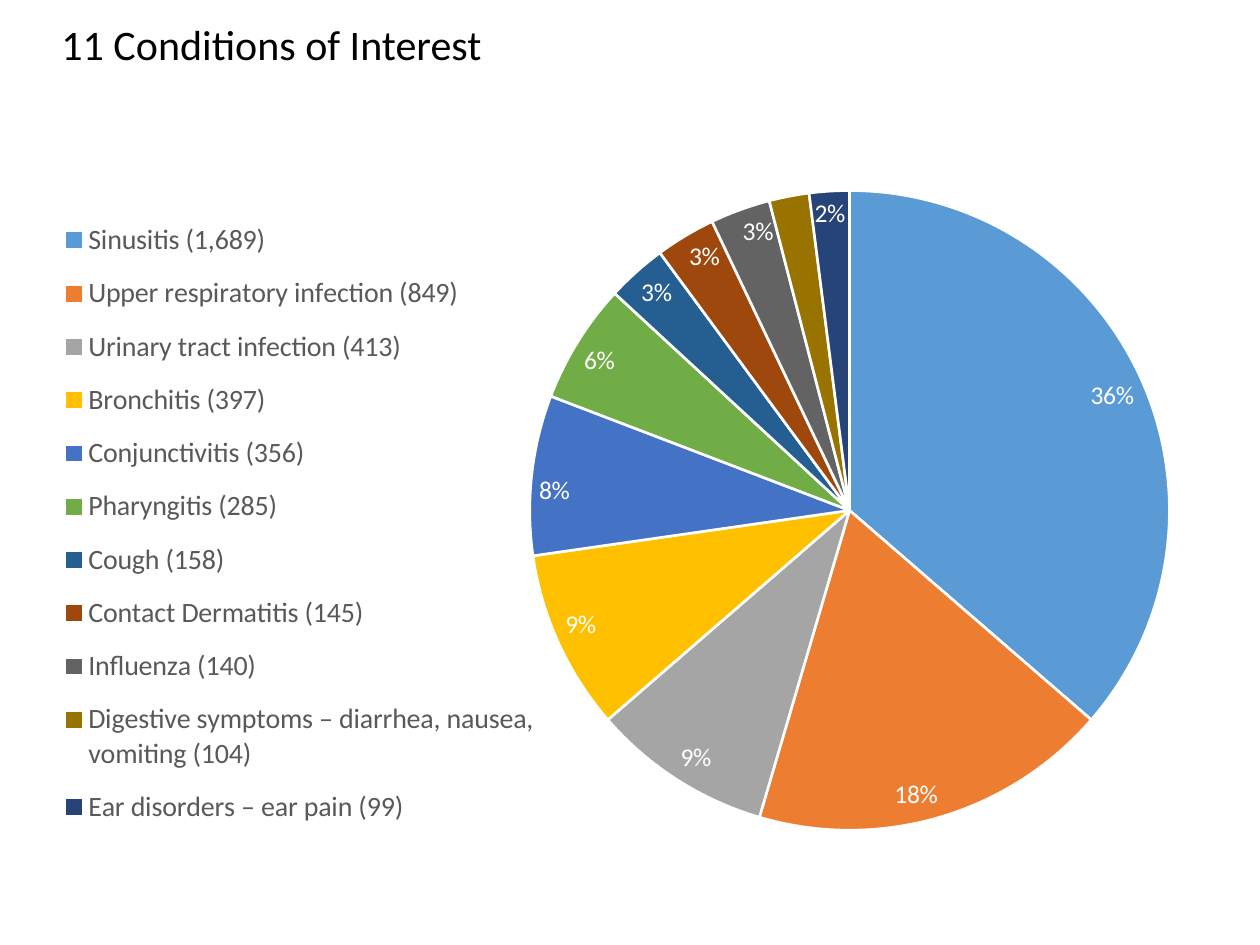
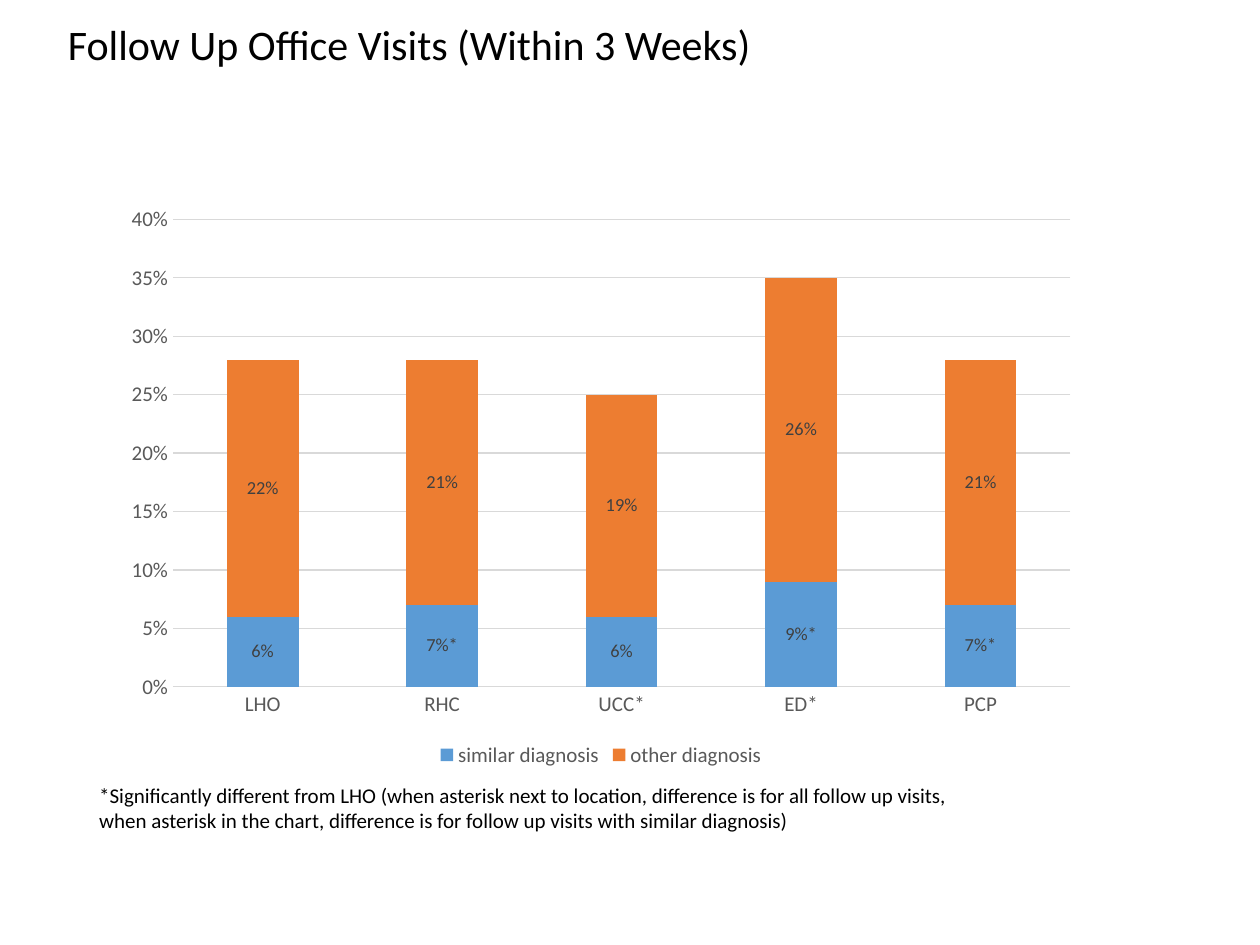
from lxml.etree import SubElement
from pptx import Presentation
from pptx.chart.data import CategoryChartData
from pptx.dml.color import RGBColor
from pptx.enum.chart import XL_CHART_TYPE, XL_LABEL_POSITION, XL_LEGEND_POSITION, XL_TICK_MARK
from pptx.enum.text import MSO_ANCHOR, MSO_AUTO_SIZE
from pptx.oxml import parse_xml
from pptx.oxml.ns import nsdecls, qn
from pptx.util import Cm, Pt

FONT = "Calibri"
BLACK = RGBColor(0x00, 0x00, 0x00)
WHITE = RGBColor(0xFF, 0xFF, 0xFF)
LABEL_GREY = RGBColor(0x40, 0x40, 0x40)
TEXT_GREY = RGBColor(0x59, 0x59, 0x59)
GRID_GREY = RGBColor(0xD9, 0xD9, 0xD9)
PALETTE = [RGBColor.from_string(code) for code in (
    "5B9BD5", "ED7D31", "A5A5A5", "FFC000", "4472C4", "70AD47",
    "255E91", "9E480E", "636363", "997300", "264478")]

CONDITIONS = [
    ("Sinusitis (1,689)", 0.36),
    ("Upper respiratory infection (849)", 0.18),
    ("Urinary tract infection (413)", 0.09),
    ("Bronchitis (397)", 0.09),
    ("Conjunctivitis (356)", 0.08),
    ("Pharyngitis (285)", 0.06),
    ("Cough (158)", 0.03),
    ("Contact Dermatitis (145)", 0.03),
    ("Influenza (140)", 0.03),
    ("Digestive symptoms – diarrhea, nausea, vomiting (104)", 0.02),
    ("Ear disorders – ear pain (99)", 0.02),
]
UNLABELLED_CONDITION = 9

LOCATIONS = ["LHO", "RHC", "UCC*", "ED*", "PCP"]
VISITS = {
    "similar diagnosis": [0.06, 0.07, 0.06, 0.09, 0.07],
    "other diagnosis": [0.22, 0.21, 0.19, 0.26, 0.21],
}
MARKED_LABELS = {1: "7%*", 3: "9%*", 4: "7%*"}
FOOTNOTE = (
    "*Significantly different from LHO (when asterisk next to location, "
    "difference is for all follow up visits, when asterisk in the chart, "
    "difference is for follow up visits with similar diagnosis)")


def style_font(font, size, color):
    font.name = FONT
    font.size = Pt(size)
    font.color.rgb = color


def add_text(page, text, left, top, width, height, size):
    box = page.shapes.add_textbox(Cm(left), Cm(top), Cm(width), Cm(height))
    frame = box.text_frame
    frame.word_wrap = True
    frame.vertical_anchor = MSO_ANCHOR.TOP
    frame.text = text
    style_font(frame.paragraphs[0].runs[0].font, size, BLACK)
    return frame


def add_title(page, text, left):
    frame = add_text(page, text, left, 0.48, 22.86, 2.14, 24)
    frame.margin_left = frame.margin_right = 0
    frame.margin_top = frame.margin_bottom = 0
    frame.paragraphs[0].line_spacing = 0.9


def add_footnote(page, text):
    frame = add_text(page, text, 1.75, 15.65, 17.98, 1.27, 12)
    frame.auto_size = MSO_AUTO_SIZE.SHAPE_TO_FIT_TEXT


def add_chart(page, kind, categories, series, area, legend_size):
    data = CategoryChartData(number_format="0%")
    data.categories = categories
    for name, values in series.items():
        data.add_series(name, values)
    chart = page.shapes.add_chart(kind, *map(Cm, area), data).chart
    style_font(chart.font, 10, BLACK)
    chart.has_title = False
    chart.has_legend = True
    chart.legend.position = XL_LEGEND_POSITION.BOTTOM
    chart.legend.include_in_layout = False
    style_font(chart.legend.font, legend_size, TEXT_GREY)
    return chart


def show_values(series, size, color, position):
    labels = series.data_labels
    labels.show_value = True
    labels.number_format = "0%"
    labels.number_format_is_linked = False
    labels.position = position
    style_font(labels.font, size, color)
    return labels


def place_part(part, index, inner, **bounds):
    for old in part.findall(qn("c:layout")):
        part.remove(old)
    layout = parse_xml(f"<c:layout {nsdecls('c')}><c:manualLayout/></c:layout>")
    manual = layout[0]
    if inner:
        SubElement(manual, qn("c:layoutTarget")).set("val", "inner")
    for side in ("x", "y"):
        SubElement(manual, qn(f"c:{side}Mode")).set("val", "edge")
    for side, share in bounds.items():
        SubElement(manual, qn(f"c:{side}")).set("val", str(share))
    part.insert(index, layout)


def hide_label(labels, index):
    labels._element.insert(0, parse_xml(
        f"<c:dLbl {nsdecls('c')}><c:idx val='{index}'/><c:delete val='1'/></c:dLbl>"))


def add_conditions_pie(page):
    names, shares = zip(*CONDITIONS)
    chart = add_chart(page, XL_CHART_TYPE.PIE, names, {"Series 1": shares},
                      (1.24, 3.43, 22.86, 13.72), 16)
    chart.plots[0].vary_by_categories = True
    series = chart.plots[0].series[0]
    for index, color in enumerate(PALETTE):
        wedge = series.points[index].format
        wedge.fill.solid()
        wedge.fill.fore_color.rgb = color
        wedge.line.color.rgb = WHITE
        wedge.line.width = Pt(1.5)
    labels = show_values(series, 14.6, WHITE, XL_LABEL_POSITION.INSIDE_END)
    hide_label(labels, UNLABELLED_CONDITION)
    plot_area = chart._chartSpace.chart.plotArea
    place_part(plot_area, 0, True, x=0.41, y=0.03, w=0.57, h=0.94)
    place_part(chart.legend._element, 1, False, x=0, y=0.05, w=0.42, h=0.94)


def style_axis(axis):
    axis.major_tick_mark = axis.minor_tick_mark = XL_TICK_MARK.NONE
    style_font(axis.tick_labels.font, 12, TEXT_GREY)


def style_line(line):
    line.color.rgb = GRID_GREY
    line.width = Pt(0.75)


def add_visits_columns(page):
    chart = add_chart(page, XL_CHART_TYPE.COLUMN_STACKED, LOCATIONS, VISITS,
                      (2.26, 3.94, 19.71, 11.63), 12)
    plot = chart.plots[0]
    plot.vary_by_categories = False
    plot.gap_width = 150
    plot.overlap = 100
    for series, color in zip(plot.series, PALETTE):
        series.format.fill.solid()
        series.format.fill.fore_color.rgb = color
        show_values(series, 10.5, LABEL_GREY, XL_LABEL_POSITION.CENTER)
    for index, text in MARKED_LABELS.items():
        label = plot.series[0].points[index].data_label
        label.text_frame.text = text
        label.position = XL_LABEL_POSITION.CENTER
        span = label.text_frame.paragraphs[0].runs[0]
        style_font(span.font, 10.5, LABEL_GREY)

    style_axis(chart.category_axis)
    style_line(chart.category_axis.format.line)
    values = chart.value_axis
    style_axis(values)
    values.minimum_scale, values.maximum_scale, values.major_unit = 0, 0.4, 0.05
    values.tick_labels.number_format = "0%"
    values.tick_labels.number_format_is_linked = False
    values.format.line.fill.background()
    style_line(values.major_gridlines.format.line)


def main():
    deck = Presentation()
    deck.slide_width, deck.slide_height = Cm(25.4), Cm(19.05)
    blank = deck.slide_layouts[6]

    page = deck.slides.add_slide(blank)
    add_title(page, "11 Conditions of Interest", 1.24)
    add_conditions_pie(page)

    page = deck.slides.add_slide(blank)
    add_title(page, "Follow Up Office Visits (Within 3 Weeks)", 1.37)
    add_footnote(page, FOOTNOTE)
    add_visits_columns(page)

    deck.save("out.pptx")


if __name__ == "__main__":
    main()
